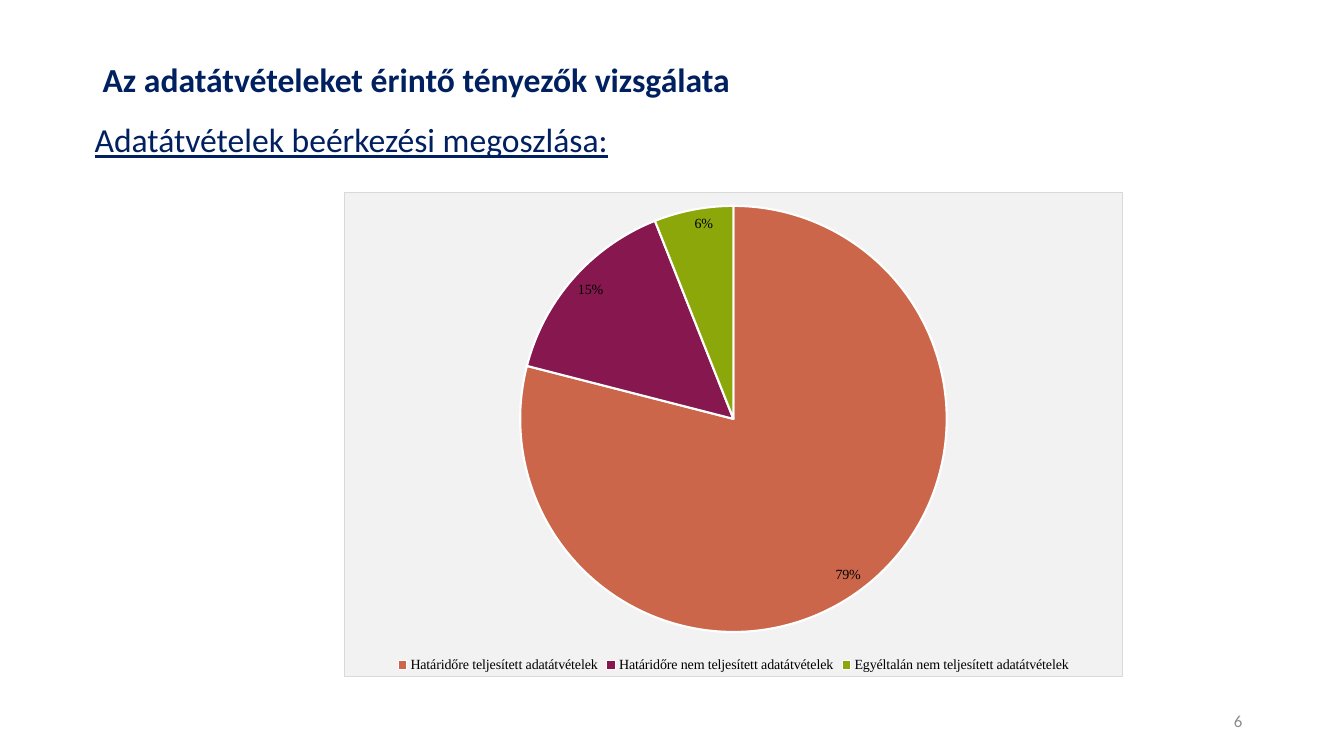
import pptx
import pptx.util
import pptx.oxml
import pptx.chart.data
from pptx.dml.color import RGBColor
from pptx.enum.chart import XL_CHART_TYPE, XL_LABEL_POSITION, XL_LEGEND_POSITION
from pptx.enum.text import MSO_ANCHOR, PP_ALIGN
from pptx.util import Inches

COLORS = {
    "navy": "002060",
    "gray": "8C8C8C",
    "black": "000000",
    "white": "FFFFFF",
    "panel": "F2F2F2",
    "border": "D9D9D9",
}

# Category, share in percent, slice colour
SLICES = [
    ("Határidőre teljesített adatátvételek", 79, "CB664B"),
    ("Határidőre nem teljesített adatátvételek", 15, "86184F"),
    ("Egyéltalán nem teljesített adatátvételek", 6, "8BA70A"),
]


def style_font(font, name, size, color):
    font.name = name
    font.size = pptx.util.Pt(size)
    font.color.rgb = RGBColor.from_string(COLORS[color])


def add_text(page, text, left, top, width, height, size, color, anchor):
    box = page.shapes.add_textbox(Inches(left), Inches(top), Inches(width), Inches(height))
    frame = box.text_frame
    frame.word_wrap = True
    frame.vertical_anchor = anchor
    frame.text = text
    para = frame.paragraphs[0]
    span = para.runs[0]
    style_font(span.font, "Calibri", size, color)
    return para, span


deck = pptx.Presentation()
deck.slide_width = Inches(13.33)
deck.slide_height = Inches(7.5)
page = deck.slides.add_slide(deck.slide_layouts[6])

# Title, subtitle and page number
para, span = add_text(page, "Az adatátvételeket érintő tényezők vizsgálata",
                      0.92, 0.4, 11.5, 0.81, 24, "navy", MSO_ANCHOR.MIDDLE)
para.line_spacing = 0.9
span.font.bold = True

para, span = add_text(page, "Adatátvételek beérkezési megoszlása:",
                      0.84, 1.18, 11.5, 4.76, 24, "navy", MSO_ANCHOR.TOP)
para.line_spacing = 0.9
span.font.underline = True

para, span = add_text(page, "6", 9.42, 6.95, 3, 0.4, 12, "gray", MSO_ANCHOR.MIDDLE)
para.alignment = PP_ALIGN.RIGHT

# Pie chart
data = pptx.chart.data.CategoryChartData()
data.categories = [name for name, share, color in SLICES]
data.add_series("Series 1", [share for name, share, color in SLICES])
chart = page.shapes.add_chart(XL_CHART_TYPE.PIE, Inches(3.41), Inches(1.9),
                              Inches(7.73), Inches(4.82), data).chart
chart.has_title = False
style_font(chart.font, "Times New Roman", 10, "black")

chart.has_legend = True
chart.legend.position = XL_LEGEND_POSITION.BOTTOM
chart.legend.include_in_layout = False
style_font(chart.legend.font, "Times New Roman", 10, "black")

# Slices and percent labels
plot = chart.plots[0]
plot.vary_by_categories = True
series = plot.series[0]
for index, (name, share, color) in enumerate(SLICES):
    slice_format = series.points[index].format
    slice_format.fill.solid()
    slice_format.fill.fore_color.rgb = RGBColor.from_string(color)
    slice_format.line.color.rgb = RGBColor.from_string(COLORS["white"])
    slice_format.line.width = pptx.util.Pt(1.5)

labels = series.data_labels
labels.show_value = False
labels.show_percentage = True
labels.number_format = "0%"
labels.number_format_is_linked = False
labels.position = XL_LABEL_POSITION.INSIDE_END
style_font(labels.font, "Times New Roman", 10, "black")

# Chart background and border, placed right after c:chart
panel = pptx.oxml.parse_xml(
    '<c:spPr xmlns:c="http://schemas.openxmlformats.org/drawingml/2006/chart"'
    ' xmlns:a="http://schemas.openxmlformats.org/drawingml/2006/main">'
    f'<a:solidFill><a:srgbClr val="{COLORS["panel"]}"/></a:solidFill>'
    f'<a:ln w="9525"><a:solidFill><a:srgbClr val="{COLORS["border"]}"/></a:solidFill></a:ln>'
    '</c:spPr>')
chart.element.find("{*}chart").addnext(panel)

deck.save("out.pptx")
